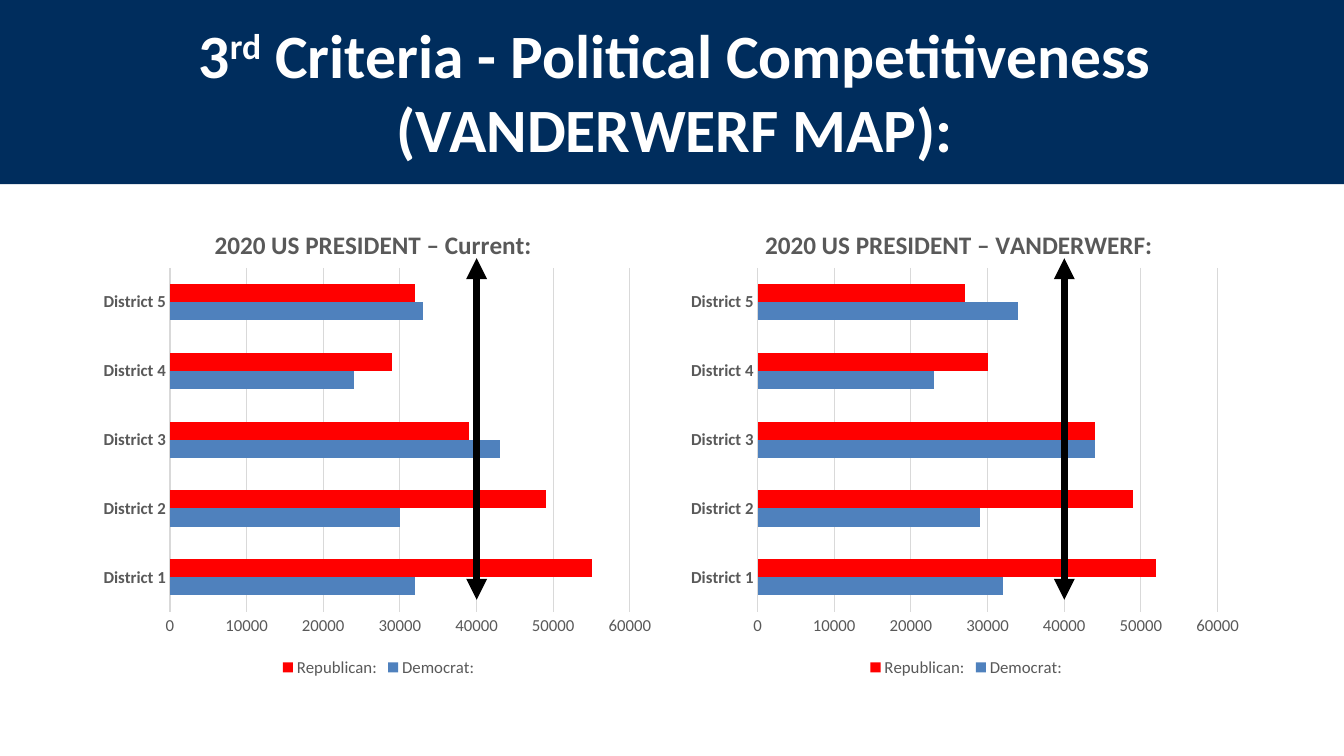
from dataclasses import dataclass

from lxml import etree
from pptx import Presentation
from pptx.chart.data import CategoryChartData
from pptx.dml.color import RGBColor
from pptx.enum.chart import XL_CHART_TYPE as ChartType
from pptx.enum.chart import XL_LEGEND_POSITION as LegendPosition
from pptx.enum.chart import XL_TICK_MARK as TickMark
from pptx.enum.shapes import MSO_CONNECTOR as Connector
from pptx.enum.shapes import MSO_SHAPE as Shape
from pptx.enum.text import PP_ALIGN as Align
from pptx.oxml.ns import qn
from pptx.util import Cm, Pt


@dataclass(frozen=True)
class Theme:
    font: str = "Calibri"
    navy: RGBColor = RGBColor(0x00, 0x2D, 0x5D)
    white: RGBColor = RGBColor(0xFF, 0xFF, 0xFF)
    black: RGBColor = RGBColor(0x00, 0x00, 0x00)
    gray: RGBColor = RGBColor(0x59, 0x59, 0x59)
    grid: RGBColor = RGBColor(0xD9, 0xD9, 0xD9)
    democrat: RGBColor = RGBColor(0x4F, 0x81, 0xBD)
    republican: RGBColor = RGBColor(0xFF, 0x00, 0x00)
    heading: Pt = Pt(44)
    chart_title: Pt = Pt(18)
    label: Pt = Pt(12)
    hairline: Pt = Pt(0.75)
    marker: Pt = Pt(5)


THEME = Theme()
SLIDE_WIDTH, SLIDE_HEIGHT = 33.87, 19.05
PLOT = {"x": 0.135, "y": 0.138, "w": 0.805, "h": 0.717}
AXIS_MAX, MARKED_VOTES = 60000, 40000
DISTRICTS = [f"District {number}" for number in range(1, 6)]
PARTY_COLORS = {"Democrat:": THEME.democrat, "Republican:": THEME.republican}
MAPS = [
    ("2020 US PRESIDENT – Current:", 0.205, {
        "Democrat:": (32000, 30000, 43000, 24000, 33000),
        "Republican:": (55000, 49000, 39000, 29000, 32000),
    }),
    ("2020 US PRESIDENT – VANDERWERF:", 0.14, {
        "Democrat:": (32000, 29000, 44000, 23000, 34000),
        "Republican:": (52000, 49000, 44000, 30000, 27000),
    }),
]


def apply_format(target, values):
    for attribute, value in values.items():
        setattr(target, attribute, value)


def style_font(font, size, color, bold=False):
    apply_format(font, {"name": THEME.font, "size": size, "bold": bold})
    font.color.rgb = color


def style_line(line, color, width):
    line.color.rgb = color
    line.width = width


def set_layout(parent, position, index, inner=False):
    for previous in parent.findall(qn("c:layout")):
        parent.remove(previous)
    layout = etree.Element(qn("c:layout"))
    manual = etree.SubElement(layout, qn("c:manualLayout"))
    settings = {"layoutTarget": "inner"} if inner else {}
    settings |= {"xMode": "edge", "yMode": "edge"} | position
    for tag, value in settings.items():
        etree.SubElement(manual, qn(f"c:{tag}")).set("val", str(value))
    parent.insert(index, layout)


def add_header(slide, left, top, width, height):
    band = slide.shapes.add_shape(
        Shape.RECTANGLE, Cm(left), Cm(top), Cm(width), Cm(height))
    band.shadow.inherit = False
    band.fill.solid()
    band.fill.fore_color.rgb = THEME.navy
    band.line.fill.background()

    heading = slide.shapes.add_textbox(
        Cm(left + 1.42), Cm(top + 0.38), Cm(width - 3.95), Cm(height + 1.17))
    heading.text_frame.word_wrap = True
    lines = [
        [("3", 0), ("rd", 30000), (" Criteria - Political Competitiveness", 0)],
        [("(VANDERWERF MAP):", 0)],
    ]
    for number, pieces in enumerate(lines):
        frame = heading.text_frame
        paragraph = frame.add_paragraph() if number else frame.paragraphs[0]
        paragraph.alignment = Align.CENTER
        properties = paragraph._p.get_or_add_pPr()
        properties.set("marL", str(Cm(1.27)))
        properties.set("indent", "0")
        for text, baseline in pieces:
            run = paragraph.add_run()
            run.text = text
            style_font(run.font, THEME.heading, THEME.white, True)
            if baseline:
                run._r.get_or_add_rPr().set("baseline", str(baseline))


def add_vote_chart(slide, left, top, width, height, title, title_x, votes):
    vote_data = CategoryChartData()
    vote_data.categories = DISTRICTS
    for party, counts in votes.items():
        vote_data.add_series(party, counts)
    chart = slide.shapes.add_chart(
        ChartType.BAR_CLUSTERED, Cm(left), Cm(top), Cm(width), Cm(height),
        vote_data).chart
    style_font(chart.font, THEME.label, THEME.gray)

    chart.has_title = True
    caption = chart.chart_title.text_frame.paragraphs[0].add_run()
    caption.text = title
    style_font(caption.font, THEME.chart_title, THEME.gray, True)
    set_layout(chart.chart_title._element, {"x": title_x, "y": 0.044}, 1)

    chart.has_legend = True
    apply_format(chart.legend, {
        "position": LegendPosition.BOTTOM, "include_in_layout": False})
    style_font(chart.legend.font, THEME.label, THEME.gray)

    plot = chart.plots[0]
    apply_format(plot, {"gap_width": 182, "overlap": 0, "vary_by_categories": False})
    for series in plot.series:
        series.format.fill.solid()
        series.format.fill.fore_color.rgb = PARTY_COLORS[series.name]

    ticks = {"major_tick_mark": TickMark.NONE, "minor_tick_mark": TickMark.NONE}
    districts, counts = chart.category_axis, chart.value_axis
    apply_format(districts, ticks)
    style_font(districts.tick_labels.font, THEME.label, THEME.gray, True)
    style_line(districts.format.line, THEME.grid, THEME.hairline)
    apply_format(counts, ticks | {
        "minimum_scale": 0, "maximum_scale": AXIS_MAX, "major_unit": 10000,
        "has_major_gridlines": True})
    style_font(counts.tick_labels.font, THEME.label, THEME.gray)
    counts.format.line.fill.background()
    style_line(counts.major_gridlines.format.line, THEME.grid, THEME.hairline)
    set_layout(chart._chartSpace.find(".//" + qn("c:plotArea")), PLOT, 0, True)


def add_vote_marker(slide, left, top, width, height):
    x = left + width * (PLOT["x"] + PLOT["w"] * MARKED_VOTES / AXIS_MAX)
    marker = slide.shapes.add_connector(
        Connector.STRAIGHT, Cm(x), Cm(top + 0.118 * height),
        Cm(x), Cm(top + 0.83 * height))
    style_line(marker.line, THEME.black, THEME.marker)
    outline = marker.line._get_or_add_ln()
    for end in ("a:headEnd", "a:tailEnd"):
        etree.SubElement(outline, qn(end)).set("type", "triangle")
    etree.SubElement(marker._element.spPr, qn("a:effectLst"))


def main():
    deck = Presentation()
    apply_format(deck, {
        "slide_width": Cm(SLIDE_WIDTH), "slide_height": Cm(SLIDE_HEIGHT)})
    slide = deck.slides.add_slide(deck.slide_layouts[6])
    add_header(slide, 0, -0.08, SLIDE_WIDTH, 4.72)
    boxes = [(2.34 + 14.81 * column, 5.08, 14.4, 12.09)
             for column in range(len(MAPS))]
    for box, (title, title_x, votes) in zip(boxes, MAPS):
        add_vote_chart(slide, *box, title, title_x, votes)
    for box in boxes:
        add_vote_marker(slide, *box)
    deck.save("out.pptx")


if __name__ == "__main__":
    main()
